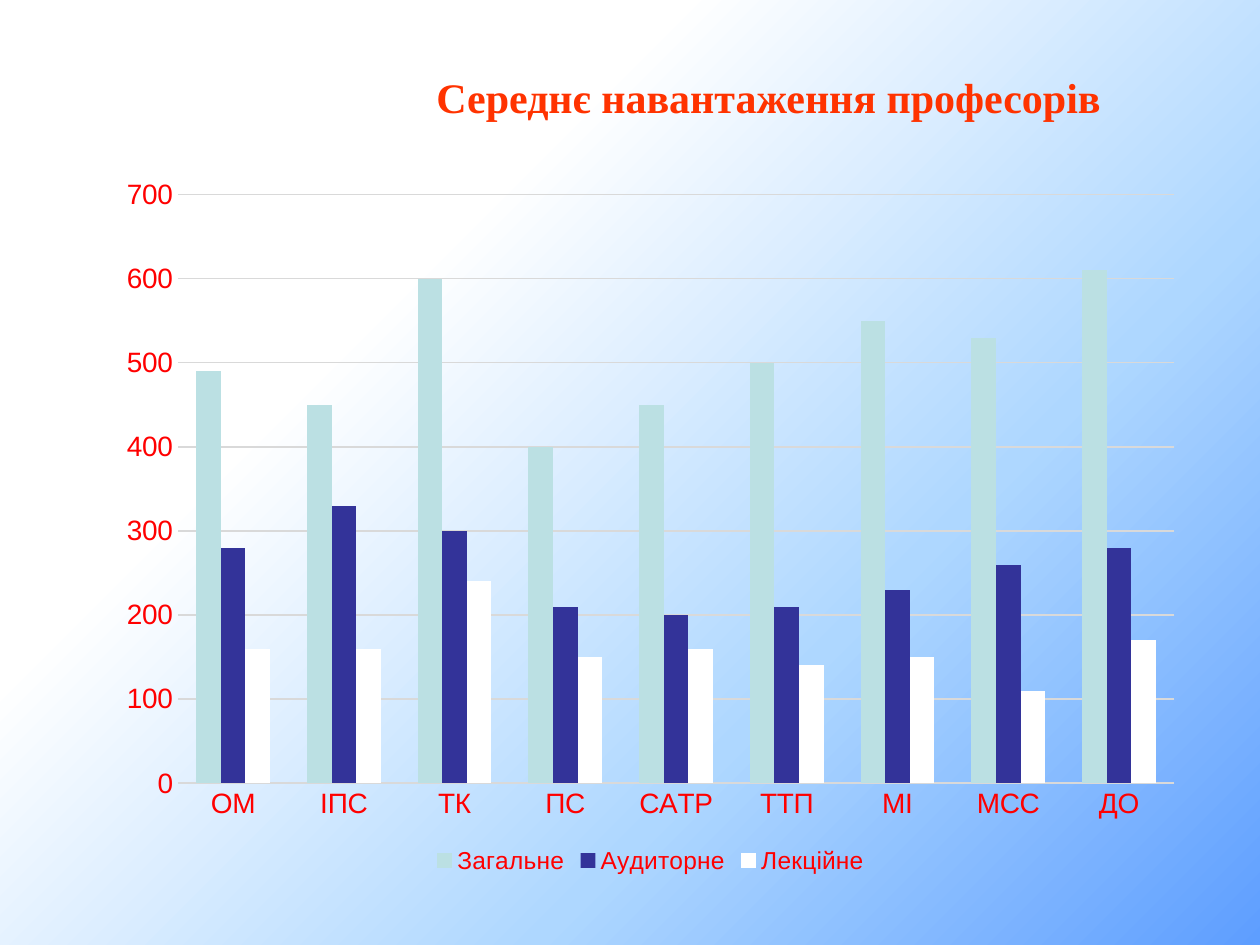
from lxml.etree import SubElement
from pptx import Presentation
from pptx.chart.data import CategoryChartData
from pptx.dml.color import RGBColor
from pptx.enum.chart import XL_CHART_TYPE, XL_LEGEND_POSITION, XL_TICK_MARK
from pptx.enum.text import MSO_AUTO_SIZE, PP_ALIGN
from pptx.oxml.ns import qn
from pptx.util import Pt

ORANGE = RGBColor(0xFF, 0x33, 0x00)
RED = RGBColor(0xFF, 0x00, 0x00)
GRID_GREY = RGBColor(0xD9, 0xD9, 0xD9)
PALE_TEAL = RGBColor(0xBB, 0xE0, 0xE3)
NAVY = RGBColor(0x33, 0x33, 0x99)
WHITE = RGBColor(0xFF, 0xFF, 0xFF)
BLUE = RGBColor(0x5E, 0x9E, 0xFF)
LIGHT_BLUE = RGBColor(0xAE, 0xD7, 0xFF)


def style_font(font, name, size, color):
    font.name = name
    font.size = Pt(size)
    font.color.rgb = color


deck = Presentation()
deck.slide_width, deck.slide_height = Pt(720), Pt(540)
page = deck.slides.add_slide(deck.slide_layouts[6])

# Background: gradient spreading from the bottom right corner
page.background.fill.gradient()
gradient = page.element.find(".//" + qn("a:gradFill"))
for child in list(gradient):
    gradient.remove(child)
stops = SubElement(gradient, qn("a:gsLst"))
for position, color, opacity in [
    (0, BLUE, 52), (33, LIGHT_BLUE, 70), (69, WHITE, 100), (100, WHITE, 0),
]:
    stop = SubElement(stops, qn("a:gs"), pos=str(position * 1000))
    fill_color = SubElement(stop, qn("a:srgbClr"), val=str(color))
    if opacity < 100:
        SubElement(fill_color, qn("a:alpha"), val=str(opacity * 1000))
circle = SubElement(gradient, qn("a:path"), path="circle")
SubElement(circle, qn("a:fillToRect"), l="100000", t="100000")

# Title
title = page.shapes.add_textbox(Pt(167), Pt(37.5), Pt(544.5), Pt(36))
frame = title.text_frame
frame.word_wrap = True
frame.auto_size = MSO_AUTO_SIZE.SHAPE_TO_FIT_TEXT
frame.text = "Середнє навантаження професорів"
paragraph = frame.paragraphs[0]
paragraph.alignment = PP_ALIGN.CENTER
span = paragraph.runs[0]
style_font(span.font, "Times New Roman", 24, ORANGE)
span.font.bold = True

# Chart
workloads = [
    ("Загальне", PALE_TEAL, [490, 450, 600, 400, 450, 500, 550, 530, 610]),
    ("Аудиторне", NAVY, [280, 330, 300, 210, 200, 210, 230, 260, 280]),
    ("Лекційне", WHITE, [160, 160, 240, 150, 160, 140, 150, 110, 170]),
]
data = CategoryChartData()
data.categories = ["ОМ", "ІПС", "ТК", "ПС", "САТР", "ТТП", "МІ", "МСС", "ДО"]
for name, color, values in workloads:
    data.add_series(name, values)
chart = page.shapes.add_chart(
    XL_CHART_TYPE.COLUMN_CLUSTERED, Pt(60), Pt(94.5), Pt(623.5), Pt(408), data
).chart
chart.has_title = False
chart.font.name = "Arial"
chart.font.size = Pt(10)

plot = chart.plots[0]
plot.vary_by_categories = False
plot.gap_width = 150
plot.overlap = 0
for series, (name, color, values) in zip(plot.series, workloads):
    series.format.fill.solid()
    series.format.fill.fore_color.rgb = color
    series.invert_if_negative = False

for axis in (chart.category_axis, chart.value_axis):
    axis.major_tick_mark = XL_TICK_MARK.NONE
    axis.minor_tick_mark = XL_TICK_MARK.NONE
    axis.format.line.fill.background()
    style_font(axis.tick_labels.font, "Arial", 16, RED)
value_axis = chart.value_axis
value_axis.minimum_scale = 0
value_axis.maximum_scale = 700
value_axis.major_unit = 100
value_axis.has_major_gridlines = True
grid_line = value_axis.major_gridlines.format.line
grid_line.width = Pt(0.75)
grid_line.color.rgb = GRID_GREY

chart.has_legend = True
chart.legend.position = XL_LEGEND_POSITION.BOTTOM
chart.legend.include_in_layout = False
style_font(chart.legend.font, "Arial", 14, RED)

deck.save("out.pptx")
